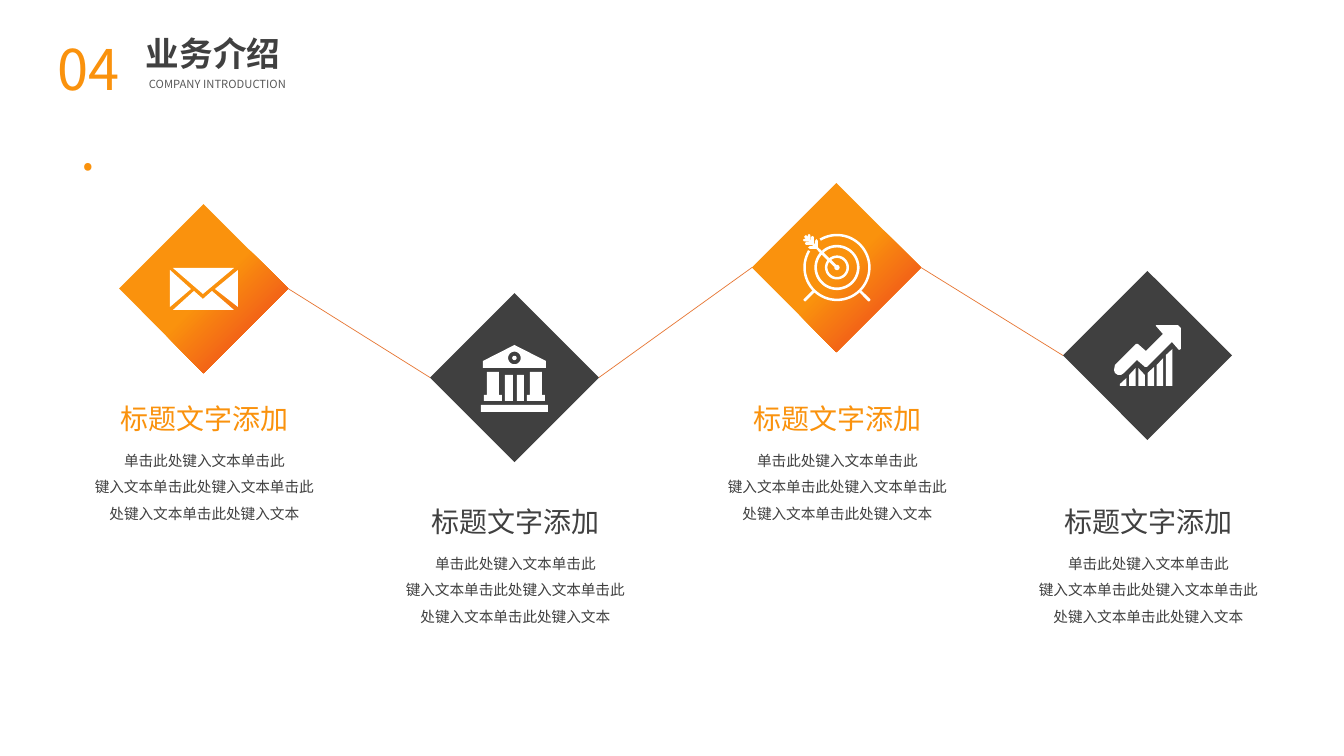
import math

from lxml import etree
from pptx import Presentation
from pptx.dml.color import RGBColor
from pptx.enum.shapes import MSO_CONNECTOR, MSO_SHAPE
from pptx.enum.text import MSO_AUTO_SIZE, PP_ALIGN
from pptx.oxml.ns import qn
from pptx.util import Pt

PX = 9072  # EMU per pixel
FONT = "Noto Sans CJK SC"
ORANGE, RED, DARK, GRAY = "FA920D", "EE471E", "404040", "595959"
WHITE, LINK = "FFFFFF", "E77734"
CENTER, JUSTIFY, LEFT = PP_ALIGN.CENTER, PP_ALIGN.JUSTIFY, PP_ALIGN.LEFT
DIAMOND, STRAIGHT = MSO_SHAPE.DIAMOND, MSO_CONNECTOR.STRAIGHT
GROW = MSO_AUTO_SIZE.SHAPE_TO_FIT_TEXT
LEFT_SIDE, RIGHT_SIDE = 1, 3
DIAMOND_SIZE = 169

STEP_TITLE = "标题文字添加"
STEP_BODY = ["单击此处键入文本单击此",
             "键入文本单击此处键入文本单击此处键入文本单击此处键入文本"]


def px(length):
    return round(length * PX)


def rgb(value):
    return RGBColor.from_string(value)


def set_gradient(fill, first, last):
    fill.gradient()
    fill.gradient_angle = 315
    for stop, color, position in zip(fill.gradient_stops, (ORANGE, RED), (first, last)):
        stop.color.rgb = rgb(color)
        stop.position = position


def add_text(slide, box, paragraphs, size, color, align=LEFT, spacing=None, bold=False):
    frame = slide.shapes.add_textbox(*map(px, box)).text_frame
    frame.word_wrap = True
    frame.auto_size = GROW
    frame.text = "\n".join(paragraphs)
    for paragraph in frame.paragraphs:
        paragraph.alignment = align
        if spacing:
            paragraph.line_spacing = spacing
        font = paragraph.runs[0].font
        font.name, font.size, font.bold = FONT, Pt(size), bold
        font.color.rgb = rgb(color)
        east_asian = etree.SubElement(paragraph.runs[0]._r.rPr, qn("a:ea"))
        east_asian.set("typeface", FONT)
    return frame


# Icon outlines: lists of closed contours, in px from the icon's corner

def rectangle(left, top, right, bottom):
    return [(left, top), (right, top), (right, bottom), (left, bottom)]


def arc(center, radius, start=0, end=360, steps=60):
    angles = [math.radians(start + (end - start) * i / steps) for i in range(steps + 1)]
    return [(center[0] + radius * math.cos(a), center[1] + radius * math.sin(a))
            for a in angles]


def envelope_icon():
    return [
        [(24, 23), (33, 31), (42, 23), (64, 42), (3, 42)],
        [(68, 2), (68, 39), (45, 21)],
        [(0, 2), (21, 21), (0, 39)],
        [(3, 0), (64, 0), (33, 26)],
    ]


def bank_icon():
    pillar = [(6, 27), (18, 27), (18, 50), (21, 50), (21, 56), (3, 56), (3, 50), (6, 50)]
    roof = [(33.5, 0), (65, 16), (65, 23), (2, 23), (2, 16)]
    return [
        rectangle(0, 60, 67, 67),
        rectangle(24, 30, 32, 56),
        rectangle(36, 30, 43, 56),
        pillar,
        [(67 - x, y) for x, y in pillar],
        roof,
        arc((33.5, 13), 6.3),
        arc((33.5, 13), 2.2),
    ]


def target_icon():
    center = (34, 33.5)
    contours = [arc(center, 2.6)]
    # Rings open towards the arrow; each gap is half as wide as its angle twice over
    for outer, inner, gap in ((33.7, 31.2, 14), (22.6, 20, 4), (12, 9.5, 8)):
        start, end = 225 + gap, 585 - gap
        contours.append(arc(center, outer, start, end) + arc(center, inner, end, start))
    # Legs
    leg = [(56.8, 58.8), (58.8, 56.8), (67.5, 65.5), (67, 67), (65.5, 67.5)]
    contours += [leg, [(68 - x, y) for x, y in leg]]
    # Arrow: feathers on one side, mirrored across the diagonal, then the shaft
    feathers = [(19, 17), (15, 13.5), (15, 7), (13.5, 5), (12, 7), (12, 10.5), (11, 9.5),
                (11, 3), (9.5, 2), (8, 3), (8, 6.5), (7.5, 6), (7.5, 1), (6, 0),
                (5, 1), (5, 3), (3, 1)]
    mirrored = [(y, x) for x, y in reversed(feathers)]
    contours.append(feathers + mirrored + [(31.2, 32.7), (33.2, 30.7)])
    return contours


def growth_icon():
    arrow = [(42, 0), (64, 0), (67, 3), (67, 24), (65, 25), (58, 17), (33, 42), (31, 42),
             (23, 35), (10, 48), (7, 50), (4, 50), (1, 48), (0, 45), (1, 40), (22, 19),
             (24, 19), (32, 26), (49, 9), (42, 1)]
    bar_tops = [(59, 53), (50, 43), (43, 50), (48, 42), (40, 33), (30, 24)]
    bars = []
    for index, (top_left, top_right) in enumerate(bar_tops):
        left = 6 + 9.2 * index
        right = left + 6.5
        bars.append([(left, top_left), (right, top_right), (right, 61), (left, 61)])
    return [arrow] + bars


def add_icon(slide, left, top, contours):
    def place(points):
        return [(px(left + x), px(top + y)) for x, y in points]

    first, *others = map(place, contours)
    builder = slide.shapes.build_freeform(*first[0], scale=1.0)
    builder.add_line_segments(first[1:])
    for points in others:
        builder.move_to(*points[0])
        builder.add_line_segments(points[1:])
    icon = builder.convert_to_shape()
    icon.shadow.inherit = False
    icon.fill.solid()
    icon.fill.fore_color.rgb = rgb(WHITE)
    icon.line.fill.background()


def add_header(slide, left, top):
    add_text(slide, (left + 91, top + 12, 211, 50), ["业务介绍"], 24, DARK, bold=True)
    add_text(slide, (left + 94, top + 56, 204, 24), ["COMPANY INTRODUCTION"], 8, GRAY, JUSTIFY)
    number = add_text(slide, (left, top, 87, 86), ["04."], 40, ORANGE, CENTER, 1.2)
    set_gradient(number.paragraphs[0].runs[0].font.fill, 0, 1)


def add_step(slide, left, diamond_top, text_top, accent, contours, icon_top):
    diamond_left = left + 38
    diamond = slide.shapes.add_shape(
        DIAMOND, *map(px, (diamond_left, diamond_top, DIAMOND_SIZE, DIAMOND_SIZE)))
    diamond.shadow.inherit = False
    diamond.line.fill.background()
    if accent == ORANGE:
        set_gradient(diamond.fill, 0.52, 0.9)
    else:
        diamond.fill.solid()
        diamond.fill.fore_color.rgb = rgb(accent)
    add_icon(slide, diamond_left + 51, diamond_top + icon_top, contours)
    add_text(slide, (left, text_top + 41, 247, 88), STEP_BODY, 10.5, DARK, CENTER, 1.5)
    add_text(slide, (left + 16, text_top, 215, 44), [STEP_TITLE], 20, accent, CENTER)
    return diamond


def add_link(slide, before, after):
    link = slide.shapes.add_connector(STRAIGHT, 0, 0, 0, 0)
    link.begin_connect(before, RIGHT_SIDE)
    link.end_connect(after, LEFT_SIDE)
    link.line.color.rgb = rgb(LINK)
    link.line.width = Pt(0.5)
    etree.SubElement(link._element.spPr, qn("a:effectLst"))


def main():
    presentation = Presentation()
    presentation.slide_width, presentation.slide_height = px(1344), px(756)
    slide = presentation.slides.add_slide(presentation.slide_layouts[6])
    add_header(slide, 45, 16)

    # Steps: left, diamond top, text top, accent, icon, icon offset
    steps = [
        (81, 204, 397, ORANGE, envelope_icon(), 64),
        (392, 293, 500, DARK, bank_icon(), 52),
        (714, 183, 397, ORANGE, target_icon(), 51),
        (1025, 271, 500, DARK, growth_icon(), 54),
    ]
    diamonds = [add_step(slide, *step) for step in steps]
    for before, after in zip(diamonds, diamonds[1:]):
        add_link(slide, before, after)

    presentation.save("out.pptx")


if __name__ == "__main__":
    main()
